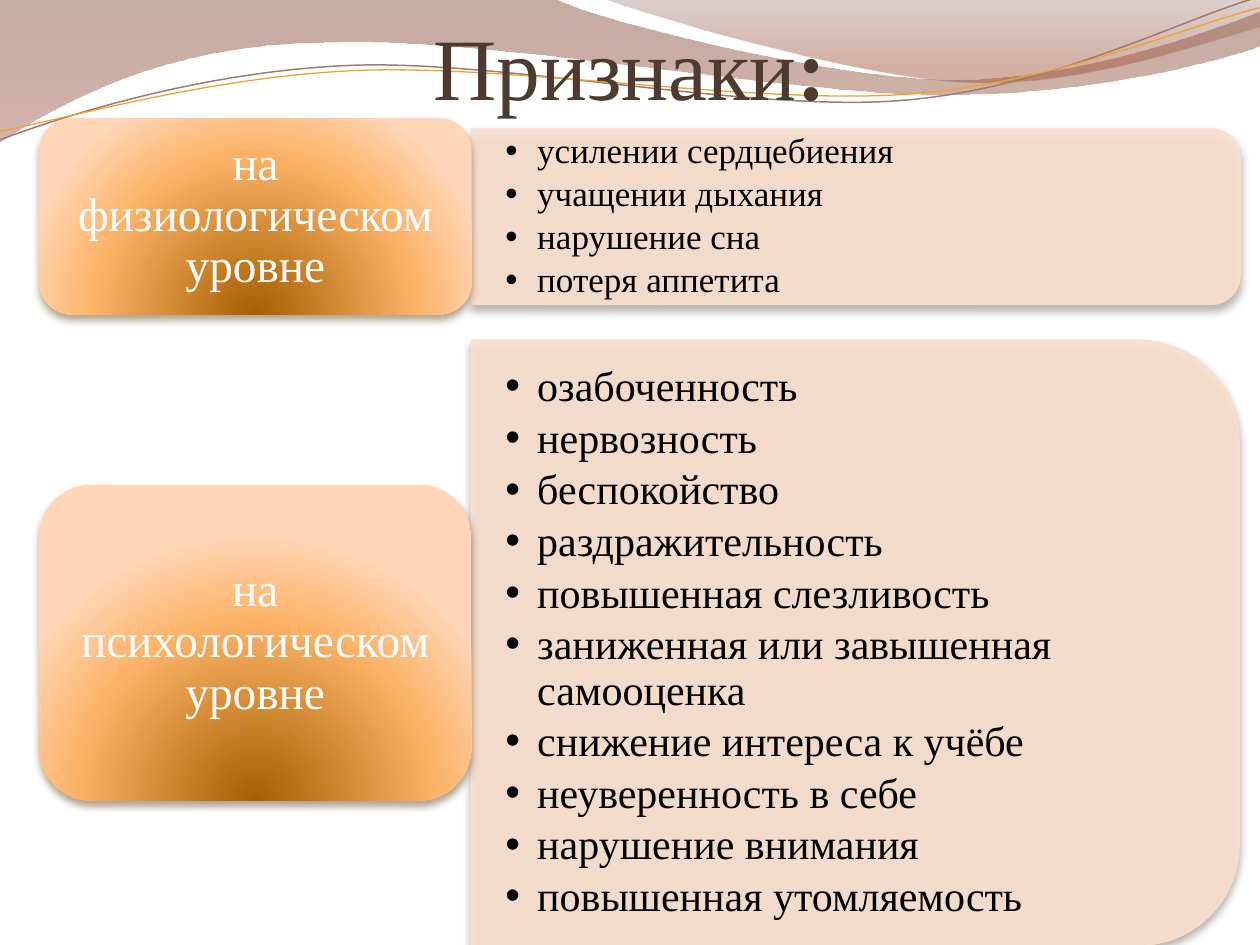
from lxml import etree
from pptx import Presentation
from pptx import util as u
from pptx.dml.color import RGBColor
from pptx.enum import shapes, text
from pptx.oxml import parse_xml
from pptx.oxml.ns import nsdecls, qn

FONT = "Times New Roman"
BROWN = RGBColor(0x4E, 0x3B, 0x30)
BLACK = RGBColor(0x00, 0x00, 0x00)
WHITE = RGBColor(0xFF, 0xFF, 0xFF)
PEACH = RGBColor(0xF9, 0xE0, 0xCD)
MAUVE = RGBColor(0xA0, 0x7B, 0x71)
GOLD = RGBColor(0xF0, 0xA2, 0x2E)
PANEL_SHADOW = RGBColor(0x58, 0x4F, 0x48)
LABEL_SHADOW = RGBColor(0x56, 0x39, 0x0E)
LEFT_WAVE = [(0, RGBColor(0x81, 0x47, 0x33), 45), (100, RGBColor(0xB1, 0x76, 0x67), 55)]
RIGHT_WAVE = [(0, RGBColor(0x8C, 0x63, 0x59), 30), (80, RGBColor(0xA1, 0x51, 0x35), 45)]
GLOW = [(0, RGBColor(0xA6, 0x5F, 0x00), 100), (68, RGBColor(0xFC, 0xB3, 0x68), 100),
        (100, RGBColor(0xFF, 0xD6, 0xB7), 100)]
DOWN = '<a:lin ang="5400000" scaled="0"/>'
RADIAL = '<a:path path="circle"><a:fillToRect l="50000" t="130000" r="50000" b="-30000"/></a:path>'


def set_gradient(sp, stops, direction):
    """Fill a shape with (position, colour, opacity) stops."""
    sp.fill.background()
    gs = "".join(f'<a:gs pos="{pos * 1000}"><a:srgbClr val="{color}">'
                 f'<a:alpha val="{alpha * 1000}"/></a:srgbClr></a:gs>'
                 for pos, color, alpha in stops)
    grad = parse_xml(f'<a:gradFill {nsdecls("a")} rotWithShape="1">'
                     f'<a:gsLst>{gs}</a:gsLst>{direction}</a:gradFill>')
    pr = sp._element.spPr
    pr.replace(pr.find(qn("a:noFill")), grad)


def set_shadow(sp, color):
    """Give a shape a soft shadow straight below it."""
    sp.shadow.inherit = False
    effects = sp._element.spPr.find(qn("a:effectLst"))
    effects.append(parse_xml(
        f'<a:outerShdw {nsdecls("a")} blurRad="{u.Pt(4.5)}" dist="{u.Pt(3)}" dir="5400000" '
        f'rotWithShape="0"><a:srgbClr val="{color}"><a:alpha val="48000"/></a:srgbClr></a:outerShdw>'))


def add_run(p, words, size, color, bold=False):
    """Add one formatted run to a paragraph."""
    r = p.add_run()
    r.text = words
    r.font.name, r.font.size, r.font.bold = FONT, u.Pt(size), bold
    r.font.color.rgb = color


def set_frame(tf, anchor, dx, dy):
    """Set wrapping, anchor and insets (cm) of a text frame."""
    tf.word_wrap = True
    tf.auto_size = text.MSO_AUTO_SIZE.NONE
    tf.vertical_anchor = anchor
    tf.margin_left = tf.margin_right = u.Cm(dx)
    tf.margin_top = tf.margin_bottom = u.Cm(dy)


def place(sp, box):
    """Move a shape to a (left, top, width, height) box in cm."""
    sp.left, sp.top, sp.width, sp.height = (u.Cm(v) for v in box)


def add_outline(s, start, segments, close):
    """Draw a freeform of straight (2 numbers) and cubic (6 numbers) segments in inches."""
    runs = [[u.Cm(v * 2.54) for v in seg] for seg in (start, *segments)]
    fb = s.shapes.build_freeform(*runs[0])
    fb.add_line_segments([seg[-2:] for seg in runs[1:]], close=close)
    sp = fb.convert_to_shape()
    sp.shadow.inherit = False
    lines = list(sp._element.spPr.iter(qn("a:lnTo")))
    for line, seg in zip(lines, runs[1:]):
        if len(seg) == 6:
            bend = etree.Element(qn("a:cubicBezTo"))
            for x, y in zip(seg[::2], seg[1::2]):
                etree.SubElement(bend, qn("a:pt"), x=str(x - sp.left), y=str(y - sp.top))
            line.getparent().replace(line, bend)
    return sp


def add_waves(s):
    """Draw the header's two waves and two thin swirls."""
    waves = [
        ((-0.01, -0.01), [(4.4, -0.01), (4.76, 0.17, 6.64, 0.63, 7.58, 0.63),
                          (8.53, 0.63, 9.58, 0.26, 10, 0.09), (10.01, 0.36),
                          (9.83, 0.44, 8.7, 0.76, 7.46, 0.75),
                          (6.22, 0.75, 3.82, 0.28, 2.57, 0.34),
                          (1.29, 0.35, 0.46, 0.83, -0.01, 1.13)], LEFT_WAVE),
        ((4.79, -0.01), [(5.09, 0.11, 6.82, 0.62, 7.69, 0.65),
                         (8.56, 0.69, 9.61, 0.32, 10, 0.21), (10, 0)], RIGHT_WAVE)]
    for start, segments, stops in waves:
        sp = add_outline(s, start, segments, True)
        set_gradient(sp, stops, DOWN)
        sp.line.fill.background()
    swirls = [
        ((0, 1.11), [(0.48, 0.93, 1.58, 0.57, 2.77, 0.52), (3.95, 0.47, 5.93, 0.89, 7.13, 0.8),
                     (8.33, 0.71, 9.38, 0.15, 9.98, -0.02)], MAUVE, 0.85),
        ((0, 1.04), [(0.47, 0.96, 1.64, 0.61, 2.83, 0.56), (4.03, 0.51, 5.97, 0.83, 7.17, 0.75),
                     (8.36, 0.67, 9.41, 0.21, 10, 0.06)], GOLD, 0.75)]
    for start, segments, color, width in swirls:
        sp = add_outline(s, start, segments, False)
        sp.fill.background()
        sp.line.color.rgb, sp.line.width = color, u.Pt(width)


def add_title(s, box):
    """Fill the title placeholder."""
    sp = s.shapes.title
    s.shapes._spTree.append(sp._element)
    place(sp, box)
    tf = sp.text_frame
    set_frame(tf, text.MSO_ANCHOR.BOTTOM, 0, 0)
    tf.margin_top = u.Cm(0.13)
    p = tf.paragraphs[0]
    p.alignment = text.PP_ALIGN.CENTER
    add_run(p, "Признаки", 50, BROWN)
    add_run(p, ":", 50, BROWN, True)


def add_panel(s, body, box, items, size):
    """Draw a panel rounded on the right, with its bulleted list."""
    x, y, w, h = box
    sp = s.shapes.add_shape(shapes.MSO_SHAPE.ROUND_2_SAME_RECTANGLE, 0, 0, 0, 0)
    place(sp, (x + (w - h) / 2, y + (h - w) / 2, h, w))
    sp.rotation = 90
    sp.fill.solid()
    sp.fill.fore_color.rgb = sp.line.color.rgb = PEACH
    sp.line.width = u.Pt(0.75)
    for clr in sp._element.spPr.iter(qn("a:srgbClr")):
        etree.SubElement(clr, qn("a:alpha")).set("val", "90000")
    set_shadow(sp, PANEL_SHADOW)

    s.shapes._spTree.append(body._element)
    inset = h * 0.05
    place(body, (x, y + inset, w - inset, h - 2 * inset))
    tf = body.text_frame
    set_frame(tf, text.MSO_ANCHOR.MIDDLE, 0.69, 0)
    for i, item in enumerate(items):
        p = tf.add_paragraph() if i else tf.paragraphs[0]
        p.level = 1
        p.line_spacing = 0.9
        p.space_before, p.space_after = u.Pt(0), u.Pt(size * 0.15)
        pr = p._p.get_or_add_pPr()
        pr.set("marL", str(u.Cm(0.64)))
        pr.set("indent", str(-u.Cm(0.64)))
        etree.SubElement(pr, qn("a:buChar")).set("char", "•")
        add_run(p, item, size, BLACK)


def add_label(s, box, words):
    """Draw a glowing rounded box with a centred caption."""
    sp = s.shapes.add_shape(shapes.MSO_SHAPE.ROUNDED_RECTANGLE, 0, 0, 0, 0)
    place(sp, box)
    set_gradient(sp, GLOW, RADIAL)
    sp.line.fill.background()
    set_shadow(sp, LABEL_SHADOW)
    tf = sp.text_frame
    set_frame(tf, text.MSO_ANCHOR.MIDDLE, 0.28, 0.15)
    p = tf.paragraphs[0]
    p.alignment = text.PP_ALIGN.CENTER
    p.line_spacing = 0.9
    add_run(p, words, 27, WHITE)


def main():
    """Build and save the slide."""
    prs = Presentation()
    prs.slide_width, prs.slide_height = u.Cm(25.4), u.Cm(19.05)
    s = prs.slides.add_slide(prs.slide_layouts[3])
    first, second = s.placeholders[1], s.placeholders[2]
    add_waves(s)
    add_title(s, (0.58, 0, 24.23, 2.39))
    add_panel(s, first, (9.5, 2.6, 15.5, 3.54),
              ["усилении сердцебиения", "учащении дыхания", "нарушение сна", "потеря аппетита"], 20)
    add_label(s, (0.79, 2.38, 8.72, 3.96), "на физиологическом уровне")
    add_panel(s, second, (9.5, 6.86, 15.48, 12.2),
              ["озабоченность", "нервозность", "беспокойство", "раздражительность",
               "повышенная слезливость", "заниженная или завышенная самооценка",
               "снижение интереса к учёбе", "неуверенность в себе",
               "нарушение внимания", "повышенная утомляемость"], 24)
    add_label(s, (0.79, 9.77, 8.71, 6.37), "на психологическом уровне")
    prs.save("out.pptx")


if __name__ == "__main__":
    main()
